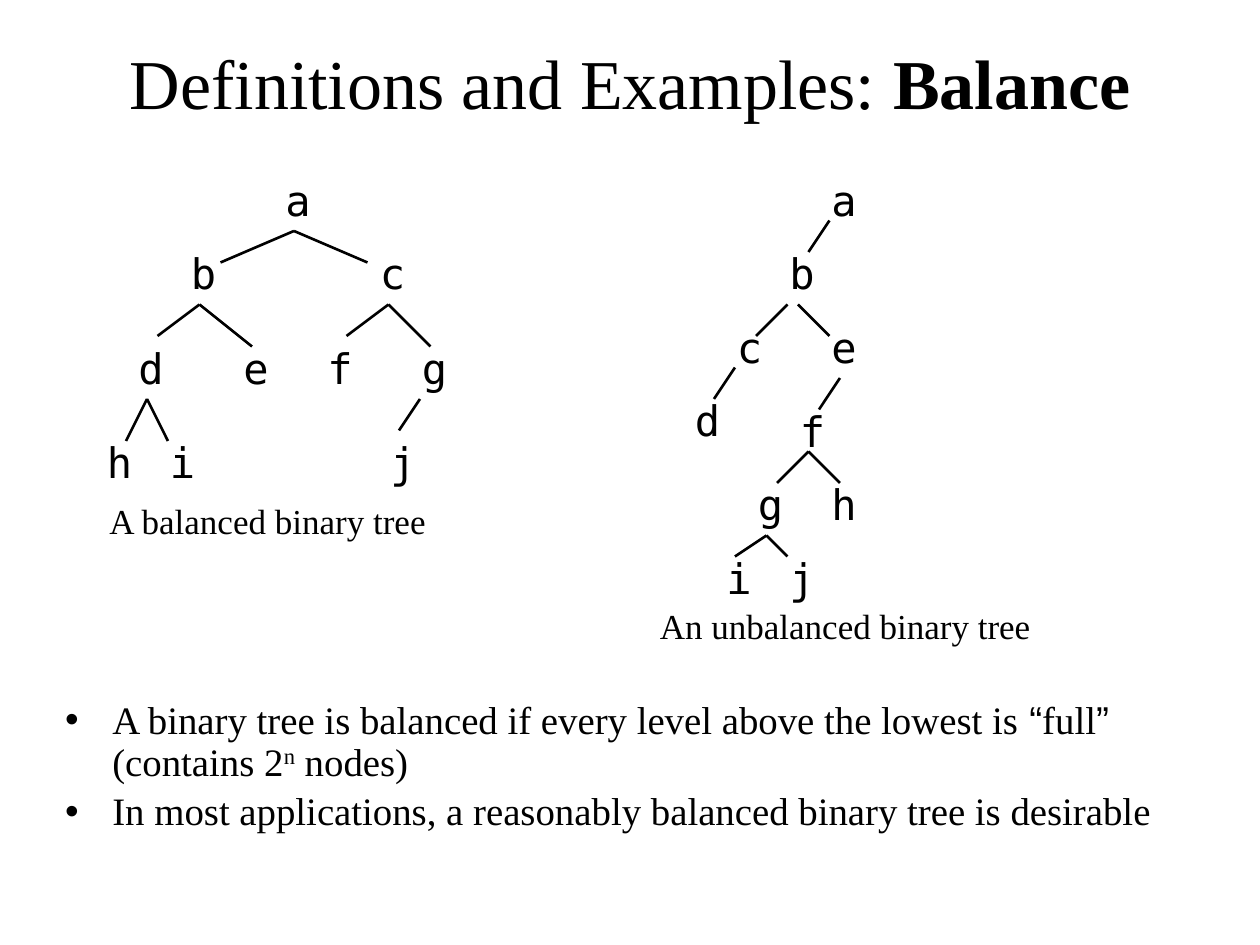
from lxml.etree import SubElement
from pptx import Presentation
from pptx.dml.color import RGBColor
from pptx.enum.shapes import MSO_CONNECTOR
from pptx.enum.text import MSO_ANCHOR, MSO_AUTO_SIZE, PP_ALIGN
from pptx.oxml.ns import qn
from pptx.util import Cm, Pt

SERIF, SANS, MONO = "Times New Roman", "Arial", "DejaVu Sans Mono"
BLACK = "000000"
GRID = 2.54 / 12
NODE_WIDTH, NODE_HEIGHT, CAPTION_HEIGHT = 5, 6, 5.28

TITLE = [("Definitions and Examples: ", {}), ("Balance", {"bold": True})]
BULLETS = [
    [
        ("A binary tree is balanced if every level above the lowest is ", {}),
        ("“", {"font": SANS}),
        ("full", {}),
        ("”", {"font": SANS}),
        (" (contains 2", {}),
        ("n", {"raised": True}),
        (" nodes)", {}),
    ],
    [("In most applications, a reasonably balanced binary tree is desirable", {})],
]

TREES = [
    {
        "nodes": {
            "a": (26, 16), "b": (17, 23), "c": (35, 23), "d": (12, 32), "e": (22, 32),
            "f": (30, 32), "g": (39, 32), "h": (9, 41), "i": (15, 41), "j": (36, 41),
        },
        "branches": [
            ((28, 22), [(21, 25), (35, 25)]),
            ((19, 29), [(15, 32), (24, 33)]),
            ((37, 29), [(33, 32), (41, 33)]),
            ((14, 38), [(12, 42), (16, 42)]),
            ((40, 38), [(38, 41)]),
        ],
        "caption": ("A balanced binary tree", 5, 47, 41),
    },
    {
        "nodes": {
            "a": (78, 16), "b": (74, 23), "c": (69, 30), "d": (65, 37), "e": (78, 30),
            "f": (75, 38), "g": (71, 45), "h": (78, 45), "i": (68, 52), "j": (74, 52),
        },
        "branches": [
            ((79, 21), [(77, 24)]),
            ((75, 29), [(72, 32)]),
            ((70, 35), [(68, 38)]),
            ((76, 29), [(79, 32)]),
            ((80, 36), [(78, 39)]),
            ((77, 43), [(74, 46), (80, 46)]),
            ((73, 51), [(70, 53), (75, 53)]),
        ],
        "caption": ("An unbalanced binary tree", 58, 57, 45),
    },
]


def color(hex_code):
    return RGBColor.from_string(hex_code)


def on_grid(*units):
    return [Cm(unit * GRID) for unit in units]


def write(paragraph, text, font=SERIF, size=20, bold=False, raised=False, align=None):
    run = paragraph.add_run()
    run.text = text
    run.font.name = font
    run.font.size = Pt(size)
    run.font.bold = bold
    run.font.color.rgb = color(BLACK)
    if raised:
        run._r.get_or_add_rPr().set("baseline", "30000")
    if align is not None:
        paragraph.alignment = align


def place(placeholder, left, top, width, height, anchor):
    placeholder.left, placeholder.top = Cm(left), Cm(top)
    placeholder.width, placeholder.height = Cm(width), Cm(height)
    frame = placeholder.text_frame
    frame.auto_size = MSO_AUTO_SIZE.NONE
    frame.vertical_anchor = anchor
    return frame


def add_label(group, text, box, **style):
    frame = group.shapes.add_textbox(*on_grid(*box)).text_frame
    frame.word_wrap = True
    frame.auto_size = MSO_AUTO_SIZE.SHAPE_TO_FIT_TEXT
    write(frame.paragraphs[0], text, **style)


def add_branch(group, parent, child):
    branch = group.shapes.add_connector(
        MSO_CONNECTOR.STRAIGHT, *on_grid(*parent, *child))
    branch.line.color.rgb = color(BLACK)
    branch.line.width = Pt(1.5)
    SubElement(branch._element.spPr, qn("a:effectLst"))


def add_tree(slide, tree):
    group = slide.shapes.add_group_shape()
    for letter, corner in tree["nodes"].items():
        add_label(group, letter, (*corner, NODE_WIDTH, NODE_HEIGHT), font=MONO, size=24)
    for parent, children in tree["branches"]:
        for child in children:
            add_branch(group, parent, child)
    caption, left, top, width = tree["caption"]
    add_label(group, caption, (left, top, width, CAPTION_HEIGHT), align=PP_ALIGN.CENTER)


def add_bullets(frame):
    for index, pieces in enumerate(BULLETS):
        bullet = frame.add_paragraph() if index else frame.paragraphs[0]
        bullet.line_spacing = 0.9
        bullet.space_before = Pt(4.4)
        properties = bullet._p.get_or_add_pPr()
        properties.set("marL", str(Cm(0.95)))
        properties.set("indent", str(-Cm(0.95)))
        for text, style in pieces:
            write(bullet, text, size=22.2, **style)


def main():
    deck = Presentation()
    deck.slide_width, deck.slide_height = Cm(25.4), Cm(19.05)
    slide = deck.slides.add_slide(deck.slide_layouts[1])
    title, body = slide.placeholders
    heading = place(title, 1.27, 0.76, 22.86, 1.78, MSO_ANCHOR.MIDDLE)
    for text, style in TITLE:
        write(heading.paragraphs[0], text, size=40, align=PP_ALIGN.CENTER, **style)
    add_bullets(place(body, 1.06, 14, 23.83, 3.02, MSO_ANCHOR.TOP))
    for tree in TREES:
        add_tree(slide, tree)
    deck.save("out.pptx")


if __name__ == "__main__":
    main()
